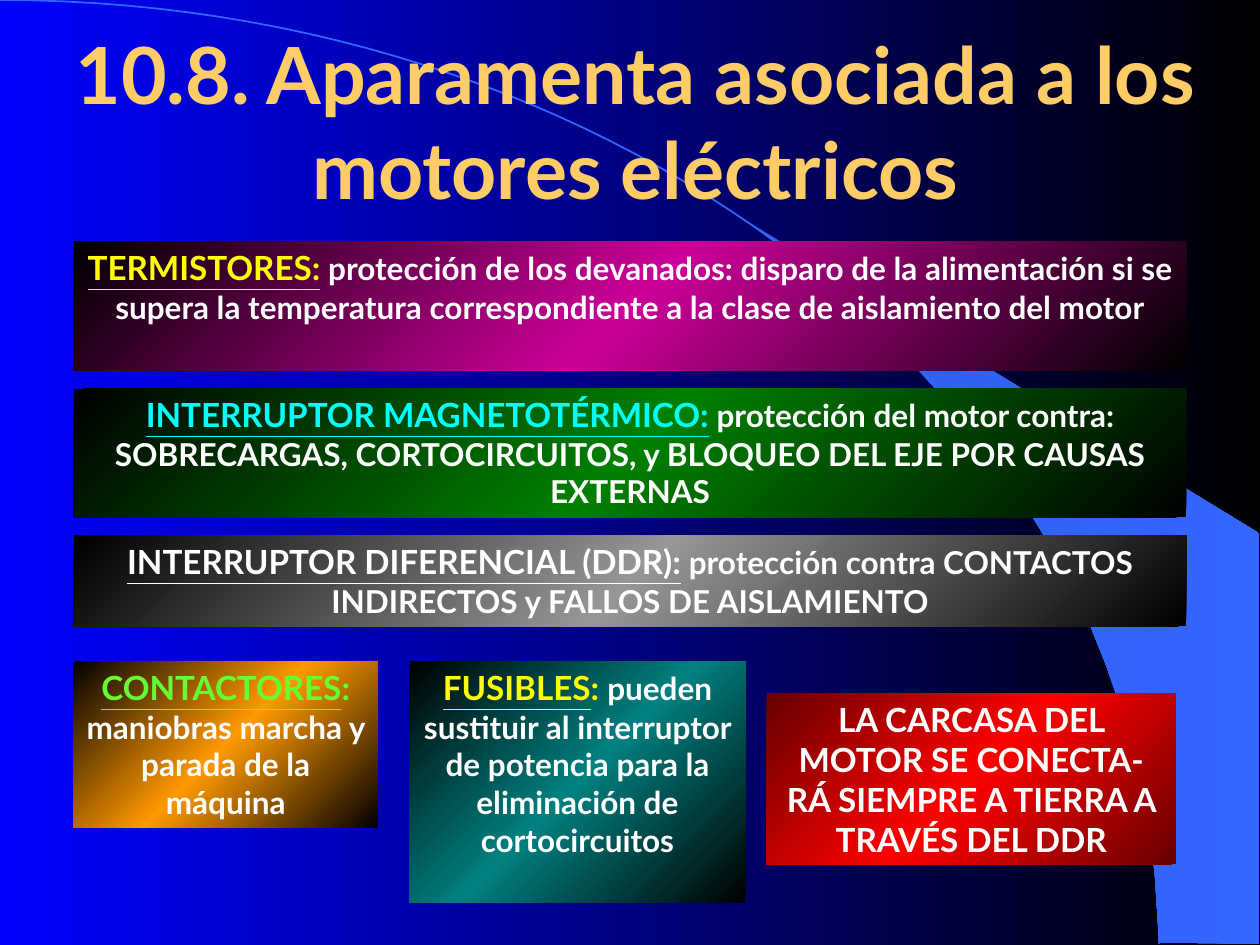
import copy

import pptx
import pptx.util
import pptx.dml.color
import pptx.enum.shapes
import pptx.enum.text
import pptx.oxml.ns

Pt = pptx.util.Pt
RGBColor = pptx.dml.color.RGBColor

FONT = "Lato"
BLACK = RGBColor(0x00, 0x00, 0x00)
WHITE = RGBColor(0xFF, 0xFF, 0xFF)
BLUE = RGBColor(0x00, 0x00, 0xFF)
SKY = RGBColor(0x33, 0x66, 0xFF)
DEEP_SKY = RGBColor(0x2E, 0x5D, 0xE7)
GOLD = RGBColor(0xFF, 0xCC, 0x66)
YELLOW = RGBColor(0xFF, 0xFF, 0x00)
CYAN = RGBColor(0x00, 0xFF, 0xFF)
LIME = RGBColor(0x66, 0xFF, 0x33)
MAGENTA = RGBColor(0xCC, 0x00, 0x99)
GREEN = RGBColor(0x00, 0x80, 0x00)
GREY = RGBColor(0x96, 0x96, 0x96)
ORANGE = RGBColor(0xFF, 0x99, 0x00)
TEAL = RGBColor(0x00, 0x80, 0x80)
RED = RGBColor(0xFF, 0x00, 0x00)
DARK_RED = RGBColor(0x66, 0x00, 0x00)

TITLE = "10.8. Aparamenta asociada a los motores eléctricos"
LEFT, WIDE = 42, 636
HEADING_SIZE, DETAIL_SIZE = 19, 18

DEVICES = [
    ((LEFT, 138, WIDE, 73.5), BLACK, MAGENTA, YELLOW, "TERMISTORES:", "",
     " protección de los devanados: disparo de la alimentación si se supera "
     "la temperatura correspondiente a la clase de aislamiento del motor"),
    ((LEFT, 222, WIDE, 73.5), BLACK, GREEN, CYAN, "INTERRUPTOR MAGNETOTÉRMICO:", "",
     " protección del motor contra: SOBRECARGAS, CORTOCIRCUITOS, y BLOQUEO "
     "DEL EJE POR CAUSAS EXTERNAS"),
    ((LEFT, 306, WIDE, 52), BLACK, GREY, WHITE, "INTERRUPTOR DIFERENCIAL (DDR):", "",
     " protección contra CONTACTOS INDIRECTOS y FALLOS DE AISLAMIENTO"),
    ((438, 396, 234, 98), DARK_RED, RED, WHITE, "",
     "LA CARCASA DEL MOTOR SE CONECTA-RÁ SIEMPRE A TIERRA A TRAVÉS DEL DDR", ""),
    ((LEFT, 378, 174, 95), BLACK, ORANGE, LIME, "CONTACTORES", ": ",
     "maniobras marcha y parada de la máquina"),
    ((234, 378, 192, 138), BLACK, TEAL, YELLOW, "FUSIBLES", ": ",
     "pueden sustituir al interruptor de potencia para la eliminación de cortocircuitos"),
]

CRESCENT = [
    (662.4, 538.6), (719.3, 539.3), (719.3, 304.6), (424, 124.6), (449, 143),
    (470, 160), (493, 180), (516, 202), (549, 238), (578, 276), (599, 310),
    (618, 345), (632, 380), (643, 412), (650, 438), (657, 472), (660, 501),
]
ARC = [(0, 0), (366, 0), (662.4, 241), (662.4, 539.3)]
ARC_STEPS = 60


def paint_gradient(fill, element, colours, angle):
    fill.gradient()
    fill.gradient_angle = -angle % 360
    stop_list = element.find(".//" + pptx.oxml.ns.qn("a:gsLst"))
    while len(stop_list) < len(colours):
        stop_list.append(copy.deepcopy(stop_list[0]))
    for index, (stop, colour) in enumerate(zip(fill.gradient_stops, colours)):
        stop.position = index / (len(colours) - 1)
        stop.color.rgb = colour


def bezier_point(corners, t):
    weights = ((1 - t) ** 3, 3 * t * (1 - t) ** 2, 3 * t ** 2 * (1 - t), t ** 3)
    return tuple(sum(w * c for w, c in zip(weights, axis)) for axis in zip(*corners))


def add_outline(slide, points, close):
    start, *rest = [(Pt(x), Pt(y)) for x, y in points]
    builder = slide.shapes.build_freeform(*start)
    builder.add_line_segments(rest, close=close)
    outline = builder.convert_to_shape()
    outline.shadow.inherit = False
    return outline


def add_device(slide, place, edge, glow, colour, heading, joint, detail):
    box = slide.shapes.add_shape(
        pptx.enum.shapes.MSO_SHAPE.RECTANGLE, *map(Pt, place))
    box.shadow.inherit = False
    box.line.fill.background()
    paint_gradient(box.fill, box.element, [edge, glow, edge], 45)
    frame = box.text_frame
    frame.word_wrap = True
    frame.vertical_anchor = pptx.enum.text.MSO_ANCHOR.TOP
    sentence = frame.paragraphs[0]
    sentence.alignment = pptx.enum.text.PP_ALIGN.CENTER
    sentence.font.name = FONT
    sentence.font.bold = True
    for text, size, ink, underline in (
        (heading, HEADING_SIZE, colour, True),
        (joint, HEADING_SIZE, colour, False),
        (detail, DETAIL_SIZE, WHITE, False),
    ):
        if text:
            run = sentence.add_run()
            run.text = text
            run.font.size = Pt(size)
            run.font.color.rgb = ink
            run.font.underline = underline


def add_title(slide):
    title = slide.shapes.title
    title.element.getparent().append(title.element)
    title.left, title.top, title.width, title.height = map(Pt, (12, 24, 702, 90))
    title.text_frame.text = TITLE
    title.text_frame.word_wrap = True
    title.text_frame.auto_size = pptx.enum.text.MSO_AUTO_SIZE.NONE
    title.text_frame.vertical_anchor = pptx.enum.text.MSO_ANCHOR.MIDDLE
    heading = title.text_frame.paragraphs[0]
    heading.alignment = pptx.enum.text.PP_ALIGN.CENTER
    heading.font.name = FONT
    heading.font.size = Pt(45)
    heading.font.bold = True
    heading.font.color.rgb = GOLD


def main():
    deck = pptx.Presentation()
    deck.slide_width, deck.slide_height = Pt(720), Pt(540)
    slide = deck.slides.add_slide(deck.slide_layouts[5])
    paint_gradient(slide.background.fill, slide.element, [BLUE, BLACK], 0)

    crescent = add_outline(slide, CRESCENT, True)
    paint_gradient(crescent.fill, crescent.element, [DEEP_SKY, SKY], 0)
    crescent.line.fill.background()

    arc = add_outline(
        slide, [bezier_point(ARC, i / ARC_STEPS) for i in range(ARC_STEPS + 1)], False)
    arc.fill.background()
    arc.line.color.rgb = SKY
    arc.line.width = Pt(1)

    add_title(slide)
    for device in DEVICES:
        add_device(slide, *device)
    deck.save("out.pptx")


if __name__ == "__main__":
    main()
